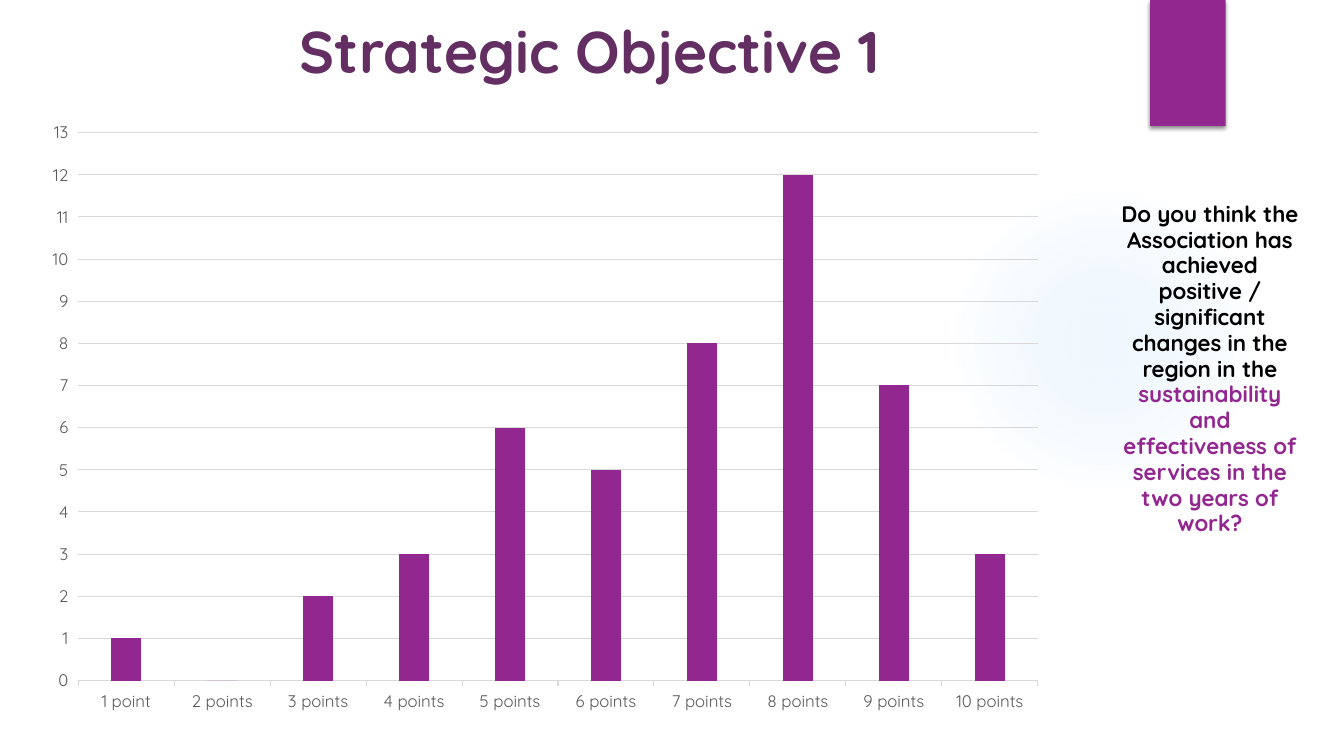
import pptx
import pptx.chart.data
import pptx.dml.color
import pptx.enum.chart
import pptx.enum.shapes
import pptx.enum.text
import pptx.oxml
import pptx.util

Pt = pptx.util.Pt
FONT = "Quicksand"
COLOURS = {
    "purple": "92278F",
    "title": "632E62",
    "text": "000000",
    "axis": "595959",
    "grid": "D9D9D9",
    "glow": "45A5ED",
    "shadow": "000000",
}
SCORES = [1, 0, 2, 3, 6, 5, 8, 12, 7, 3]
NAMESPACE = 'xmlns:a="http://schemas.openxmlformats.org/drawingml/2006/main"'


def colour(name):
    return pptx.dml.color.RGBColor.from_string(COLOURS[name])


def style_font(font, size, name, bold=False):
    font.name = FONT
    font.size = Pt(size)
    font.bold = bold
    font.color.rgb = colour(name)


def add_shape(page, kind, left, top, width, height):
    shape = page.shapes.add_shape(kind, Pt(left), Pt(top), Pt(width), Pt(height))
    shape.shadow.inherit = False
    shape.line.fill.background()
    return shape


def add_glow(page, left, top, size):
    """Add a circle that fades from its centre to nothing."""
    circle = add_shape(page, pptx.enum.shapes.MSO_SHAPE.OVAL, left, top, size, size)
    stops = "".join(
        f'<a:gs pos="{place * 1000}"><a:srgbClr val="{COLOURS["glow"]}">'
        f'<a:alpha val="{opacity * 1000}"/></a:srgbClr></a:gs>'
        for place, opacity in [(0, 7), (36, 6), (69, 0)]
    )
    gradient = pptx.oxml.parse_xml(
        f'<a:gradFill {NAMESPACE} rotWithShape="1"><a:gsLst>{stops}</a:gsLst>'
        '<a:path path="circle">'
        '<a:fillToRect l="50000" t="50000" r="50000" b="50000"/></a:path></a:gradFill>'
    )
    circle._element.spPr.find(pptx.oxml.ns.qn("a:prstGeom")).addnext(gradient)


def add_ribbon(page, left, top, width, height):
    ribbon = add_shape(page, pptx.enum.shapes.MSO_SHAPE.RECTANGLE, left, top, width, height)
    ribbon.fill.solid()
    ribbon.fill.fore_color.rgb = colour("purple")
    shadow = pptx.oxml.parse_xml(
        f'<a:outerShdw {NAMESPACE} blurRad="{Pt(3)}" dist="{Pt(2)}" dir="5400000" '
        f'rotWithShape="0"><a:srgbClr val="{COLOURS["shadow"]}">'
        '<a:alpha val="45000"/></a:srgbClr></a:outerShdw>'
    )
    ribbon._element.spPr.find(pptx.oxml.ns.qn("a:effectLst")).append(shadow)


def add_text(page, left, top, width, height, size, spans, spacing=1.0):
    """Add a centred bold paragraph made of (text, colour name) spans."""
    box = page.shapes.add_textbox(Pt(left), Pt(top), Pt(width), Pt(height))
    box.text_frame.word_wrap = True
    para = box.text_frame.paragraphs[0]
    para.alignment = pptx.enum.text.PP_ALIGN.CENTER
    para.line_spacing = spacing
    for text, name in spans:
        span = para.add_run()
        span.text = text
        style_font(span.font, size, name, bold=True)
    return box


def style_line(line, name):
    line.color.rgb = colour(name)
    line.width = Pt(0.75)


def add_score_chart(page, left, top, width, height):
    data = pptx.chart.data.CategoryChartData()
    data.categories = [
        f"{score} point" + ("s" if score > 1 else "")
        for score in range(1, len(SCORES) + 1)
    ]
    data.add_series("Series 1", SCORES)
    chart = page.shapes.add_chart(
        pptx.enum.chart.XL_CHART_TYPE.COLUMN_CLUSTERED,
        Pt(left), Pt(top), Pt(width), Pt(height), data,
    ).chart
    chart.has_legend = False
    chart.has_title = False
    style_font(chart.font, 10, "text")

    plot = chart.plots[0]
    plot.gap_width = 219
    plot.overlap = -27
    plot.vary_by_categories = False
    columns = plot.series[0].format.fill
    columns.solid()
    columns.fore_color.rgb = colour("purple")

    for axis in (chart.category_axis, chart.value_axis):
        style_font(axis.tick_labels.font, 12, "axis")
        axis.major_tick_mark = pptx.enum.chart.XL_TICK_MARK.OUTSIDE
    style_line(chart.category_axis.format.line, "grid")

    values = chart.value_axis
    values.minimum_scale = 0
    values.maximum_scale = 13
    values.major_unit = 1
    values.format.line.fill.background()
    style_line(values.major_gridlines.format.line, "grid")


def main():
    deck = pptx.Presentation()
    deck.slide_width, deck.slide_height = Pt(960), Pt(540)
    page = deck.slides.add_slide(deck.slide_layouts[6])

    add_glow(page, 677.5, 132, 222)
    add_ribbon(page, 821.5, 0, 54, 90)
    add_text(page, 51, 7, 741, 71, 42, [("Strategic Objective 1", "title")])
    add_score_chart(page, 23, 78.5, 733, 438.5)
    question = add_text(page, 791.5, 140.5, 145.5, 259, 16, [
        ("Do you think the Association has achieved positive / significant "
         "changes in the region in the ", "text"),
        ("sustainability and effectiveness of services in the two years of work?",
         "purple"),
    ], spacing=0.96)
    question.text_frame.auto_size = pptx.enum.text.MSO_AUTO_SIZE.SHAPE_TO_FIT_TEXT

    deck.save("out.pptx")


if __name__ == "__main__":
    main()
